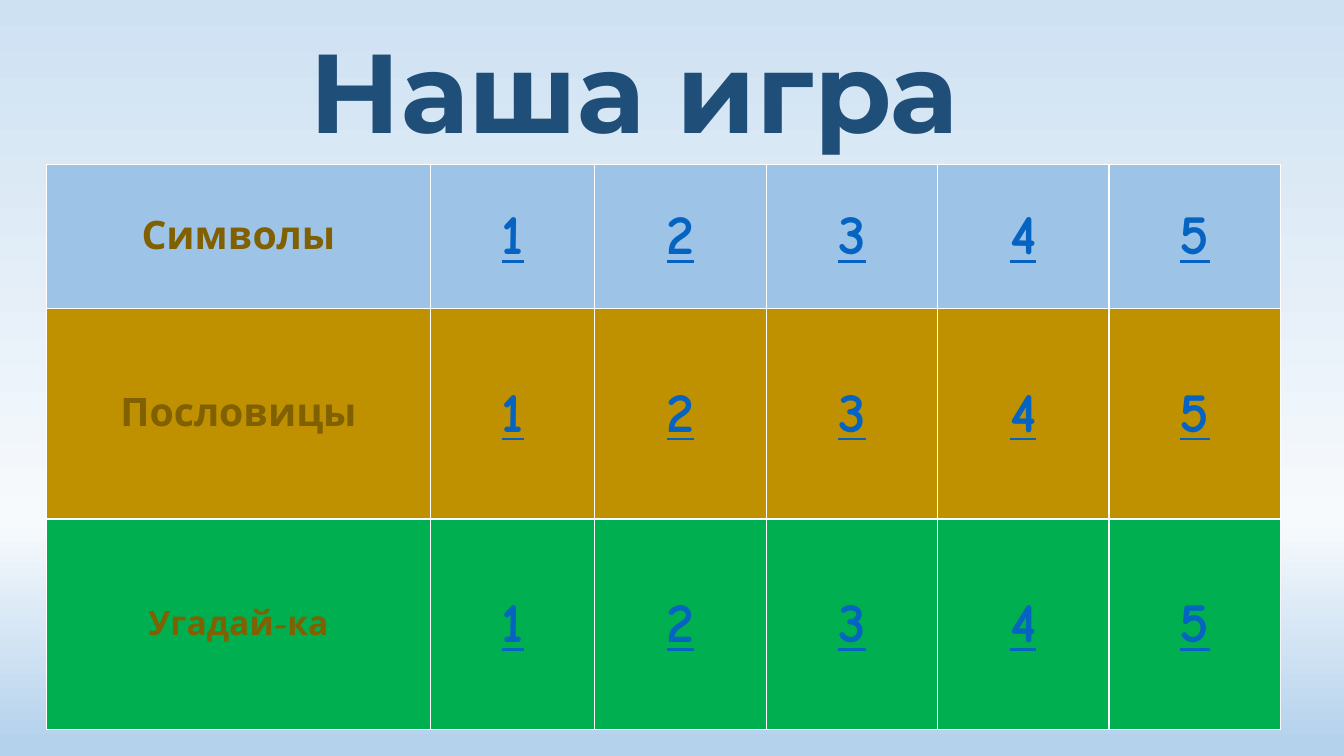
from lxml.etree import SubElement
from pptx import Presentation
from pptx.dml.color import RGBColor
from pptx.enum.text import MSO_ANCHOR, MSO_AUTO_SIZE, PP_ALIGN
from pptx.oxml.ns import qn
from pptx.util import Inches, Pt

TITLE = "Наша игра"
QUESTIONS = ["1", "2", "3", "4", "5"]
CATEGORIES = [
    {"name": "Символы", "size": 28, "fill": "9DC3E6", "height": 1.43},
    {"name": "Пословицы", "size": 28, "fill": "BF9000", "height": 2.09},
    {"name": "Угадай-ка", "size": 24, "fill": "00B050", "height": 2.09},
]
COLUMN_WIDTHS = [3.81, 1.63] + [1.7] * 4
TITLE_PLACE = {"left": 2.03, "top": 0.16, "width": 8.52, "height": 1.45}
BOARD_CORNER = (0.46, 1.63)

THEME = {
    "sky": [(0, "CEE1F2"), (69, "F7FAFD"), (98, "B5D2EC"), (100, "B5D2EC")],
    "border": "FFFFFF",
    "border_width": 1,
    "title": {"name": "Montserrat", "size": Pt(80), "bold": True, "color": "1F4E79"},
    "category": {"name": "Comic Neue", "bold": True, "color": "806000"},
    "question": {"name": "Comic Neue", "size": Pt(40), "bold": True,
                 "underline": True, "color": "0563C1"},
}


def set_attributes(target, values):
    for name, value in values.items():
        setattr(target, name, value)


def write_text(frame, text, style):
    para = frame.paragraphs[0]
    para.alignment = PP_ALIGN.CENTER
    span = para.add_run()
    span.text = text
    values = dict(style)
    span.font.color.rgb = RGBColor.from_string(values.pop("color"))
    set_attributes(span.font, values)


def paint_sky(page):
    fill = page.background.fill
    fill.gradient()
    fill.gradient_angle = 270
    stops = next(page.element.iter(qn("a:gsLst")))
    for stop in list(stops):
        stops.remove(stop)
    for percent, color in THEME["sky"]:
        stop = SubElement(stops, qn("a:gs"), pos=str(percent * 1000))
        SubElement(stop, qn("a:srgbClr"), val=color)


def add_borders(cell):
    properties = cell._tc.get_or_add_tcPr()
    for side in ("a:lnL", "a:lnR", "a:lnT", "a:lnB"):
        line = SubElement(properties, qn(side), w=str(Pt(THEME["border_width"])))
        fill = SubElement(line, qn("a:solidFill"))
        SubElement(fill, qn("a:srgbClr"), val=THEME["border"])


def add_title(page):
    box = page.shapes.title
    set_attributes(box, {side: Inches(length) for side, length in TITLE_PLACE.items()})
    set_attributes(box.text_frame, {
        "word_wrap": True,
        "auto_size": MSO_AUTO_SIZE.NONE,
        "vertical_anchor": MSO_ANCHOR.TOP,
    })
    write_text(box.text_frame, TITLE, THEME["title"])


def add_board(page):
    left, top = BOARD_CORNER
    height = sum(category["height"] for category in CATEGORIES)
    board = page.shapes.add_table(
        len(CATEGORIES), len(COLUMN_WIDTHS), Inches(left), Inches(top),
        Inches(sum(COLUMN_WIDTHS)), Inches(height)).table
    set_attributes(board, {"first_row": False, "horz_banding": False})
    for column, width in zip(board.columns, COLUMN_WIDTHS):
        column.width = Inches(width)
    for row, category in zip(board.rows, CATEGORIES):
        row.height = Inches(category["height"])
        name_style = {**THEME["category"], "size": Pt(category["size"])}
        entries = [(category["name"], name_style)]
        entries += [(number, THEME["question"]) for number in QUESTIONS]
        for cell, (text, style) in zip(row.cells, entries):
            cell.vertical_anchor = MSO_ANCHOR.MIDDLE
            add_borders(cell)
            cell.fill.solid()
            cell.fill.fore_color.rgb = RGBColor.from_string(category["fill"])
            write_text(cell.text_frame, text, style)


def main():
    deck = Presentation()
    set_attributes(deck, {"slide_width": Inches(13.33), "slide_height": Inches(7.5)})
    page = deck.slides.add_slide(deck.slide_layouts[5])
    paint_sky(page)
    add_board(page)
    add_title(page)
    deck.save("out.pptx")


if __name__ == "__main__":
    main()
